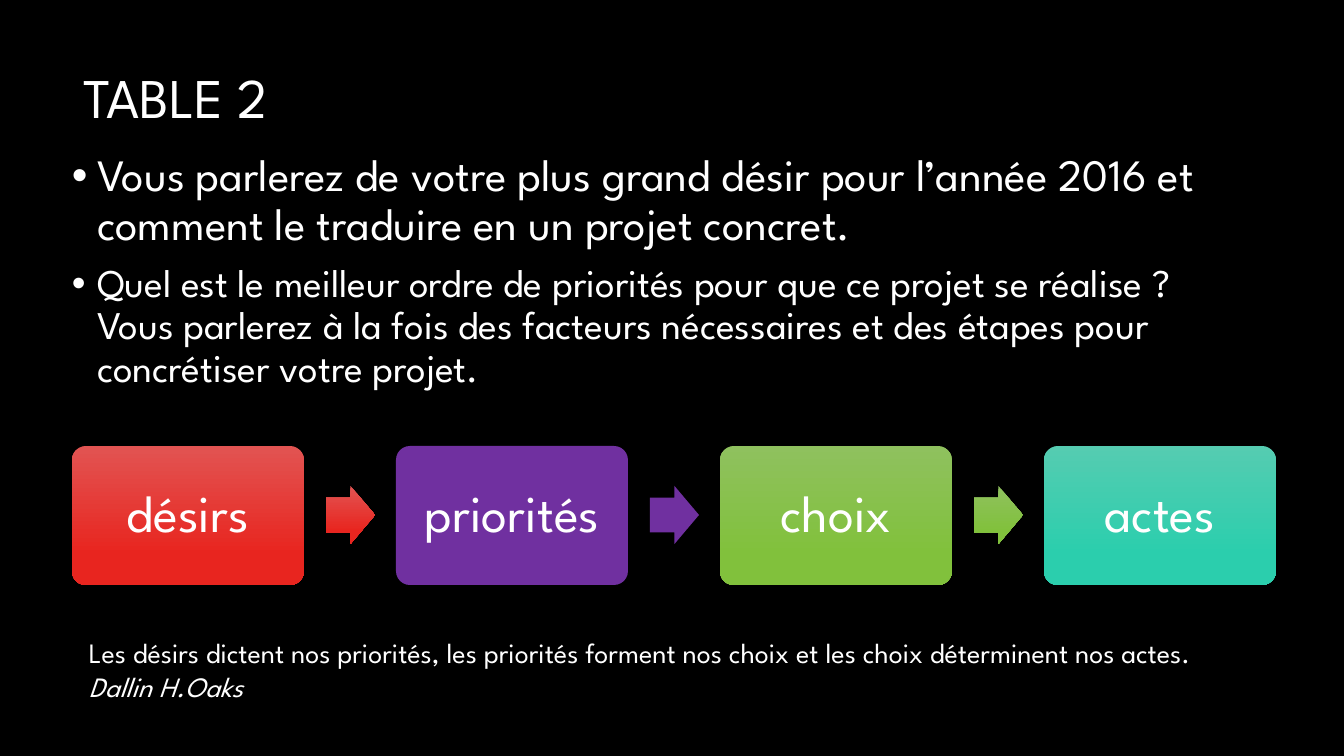
from lxml import etree
from pptx import Presentation, util as u
from pptx.dml.color import RGBColor
from pptx.enum import shapes, text
from pptx.oxml import ns

PX = 914400 / 100.8
FONT = "League Spartan"
WHITE = "FFFFFF"


def px(*lengths):
    return [u.Emu(round(length * PX)) for length in lengths]


def paint(color, value):
    color.rgb = RGBColor.from_string(value)


presentation = Presentation()
presentation.slide_width, presentation.slide_height = px(1344, 756)
slide = presentation.slides.add_slide(presentation.slide_layouts[5])
slide.background.fill.solid()
paint(slide.background.fill.fore_color, "000000")

title = slide.shapes.title
title.left, title.top, title.width, title.height = px(73, 29, 1167, 142)
title.text_frame.text = "TABLE 2"
title.text_frame.auto_size = text.MSO_AUTO_SIZE.NONE
title.text_frame.vertical_anchor = text.MSO_ANCHOR.MIDDLE
paragraph = title.text_frame.paragraphs[0]
paragraph.alignment = text.PP_ALIGN.LEFT
paragraph.line_spacing = 0.9
paragraph.runs[0].font.size = u.Pt(40)

questions = [
    ("Vous parlerez de votre plus grand désir pour l’année 2016 et comment le traduire en un projet concret.", 32),
    ("Quel est le meilleur ordre de priorités pour que ce projet se réalise ? Vous parlerez à la fois des facteurs nécessaires et des étapes pour concrétiser votre projet.", 28),
]
body = slide.shapes.add_textbox(*px(62, 148, 1192, 260))
body.text_frame.word_wrap = True
body.text_frame.text = "\n".join(question for question, size in questions)
for index, (paragraph, (question, size)) in enumerate(zip(body.text_frame.paragraphs, questions)):
    paragraph.line_spacing = 0.9
    paragraph.space_before = u.Pt(10 if index else 0)
    properties = paragraph._p.get_or_add_pPr()
    properties.set("marL", "228600")
    properties.set("indent", "-228600")
    etree.SubElement(properties, ns.qn("a:buFont")).set("typeface", "Arial")
    etree.SubElement(properties, ns.qn("a:buChar")).set("char", "•")
    paragraph.runs[0].font.size = u.Pt(size)

steps = [
    ("désirs", "E25452", "E8251F"),
    ("priorités", "7030A0", "7030A0"),
    ("choix", "8FC15E", "81C13C"),
    ("actes", "55CCB1", "2BCEAD"),
]
for index, (label, top_color, bottom_color) in enumerate(steps):
    left = 72 + 324 * index
    box = slide.shapes.add_shape(shapes.MSO_SHAPE.ROUNDED_RECTANGLE, *px(left, 446, 232, 139))
    box.adjustments[0] = 0.1
    frame = box.text_frame
    frame.text = label
    frame.margin_left = frame.margin_right = frame.margin_top = frame.margin_bottom = px(19)[0]
    frame.vertical_anchor = text.MSO_ANCHOR.MIDDLE
    frame.paragraphs[0].alignment = text.PP_ALIGN.CENTER
    frame.paragraphs[0].line_spacing = 0.9
    frame.paragraphs[0].runs[0].font.size = u.Pt(37)
    parts = [box]
    if index < len(steps) - 1:
        arrow = slide.shapes.add_shape(shapes.MSO_SHAPE.RIGHT_ARROW, *px(left + 254, 486, 49, 58))
        arrow.adjustments[0] = 0.6
        parts.append(arrow)
    for shape in parts:
        shape.shadow.inherit = False
        shape.line.fill.background()
        if top_color == bottom_color:
            shape.fill.solid()
            paint(shape.fill.fore_color, top_color)
        else:
            shape.fill.gradient()
            shape.fill.gradient_angle = 270
            for stop, position, value in zip(shape.fill.gradient_stops, (0, 0.78), (top_color, bottom_color)):
                stop.position = position
                paint(stop.color, value)

quote = slide.shapes.add_textbox(*px(79, 631, 1189, 78))
quote.text_frame.word_wrap = True
paragraph = quote.text_frame.paragraphs[0]
paragraph.text = "Les désirs dictent nos priorités, les priorités forment nos choix et les choix déterminent nos actes. "
author = paragraph.add_run()
author.text = "Dallin H.Oaks"
author.font.italic = True
for run in paragraph.runs:
    run.font.size = u.Pt(20)

for shape in slide.shapes:
    for paragraph in shape.text_frame.paragraphs:
        for run in paragraph.runs:
            run.font.name = FONT
            paint(run.font.color, WHITE)

presentation.save("out.pptx")
